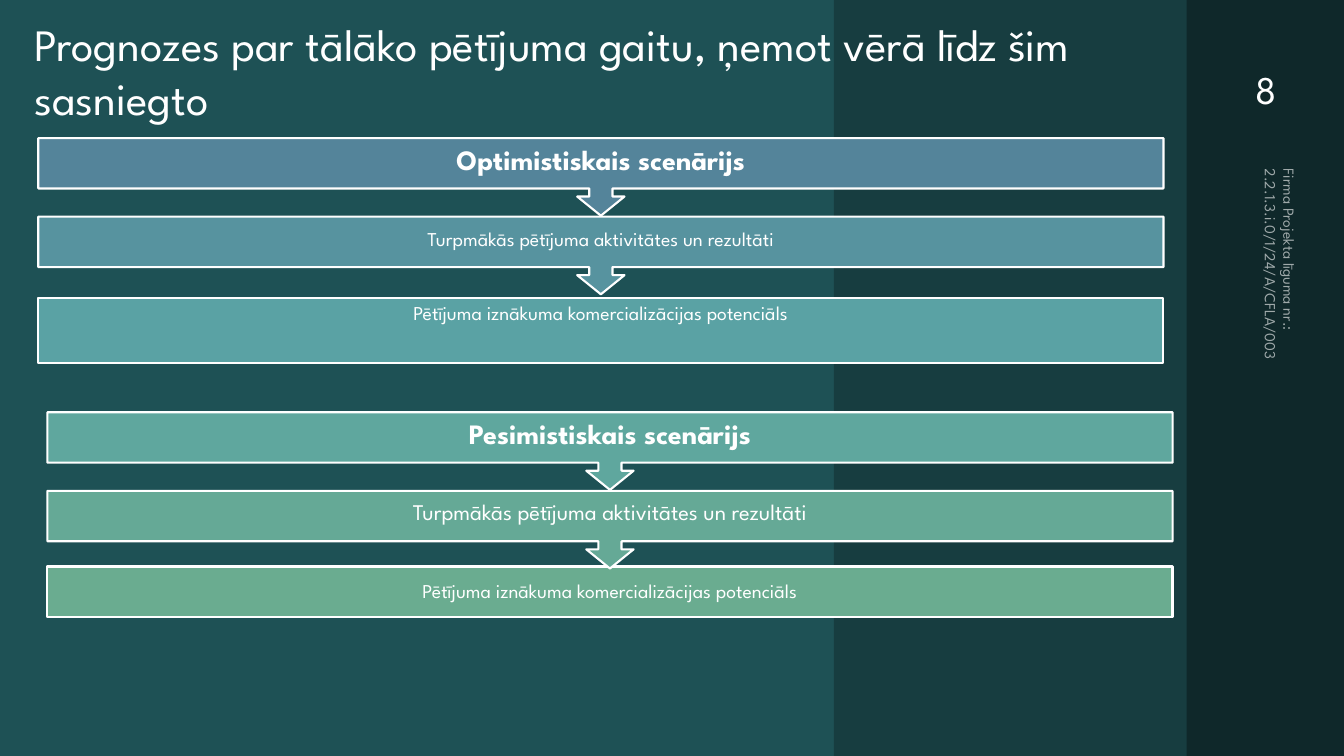
from pptx import Presentation
from pptx.util import Inches, Pt
from pptx.dml.color import RGBColor as RGB
from pptx.enum.shapes import MSO_SHAPE as Kind
from pptx.enum.text import MSO_ANCHOR as Anchor, PP_ALIGN as Align
from lxml import etree

FONT = "League Spartan"
HUES = {"back": "000000", "main": "1E5155", "mid": "173D40", "side": "0F282A",
        "white": "FFFFFF"}
TITLE = "Prognozes par tālāko pētījuma gaitu, ņemot vērā līdz šim sasniegto"
NUMBER = "8"
FOOTER = "Firma Projekta līguma nr.: 2.2.1.3.i.0/1/24/A/CFLA/003"
STEPS = "Turpmākās pētījuma aktivitātes un rezultāti"
MARKET = "Pētījuma iznākuma komercializācijas potenciāls"

PANELS = [(0, 13.33, "main"), (8.27, 3.52, "mid"), (11.77, 1.57, "side")]
# left, top, text, size, bold, fill, side inset, bottom inset
ARROWS = [
    (0.47, 4.87, STEPS, 16, False, "65A996", 0.12, 0.44),
    (0.47, 4.09, "Pesimistiskais scenārijs", 20, True, "5FA79E", 0.16, 0.47),
    (0.38, 2.15, STEPS, 14, False, "57939F", 0.11, 0.42),
    (0.38, 1.37, "Optimistiskais scenārijs", 20, True, "54849A", 0.16, 0.47),
]
# left, top, height, fill, inset, bottom inset
ENDS = [(0.47, 5.62, 0.5, "6AAC90", 0.11, 0.11),
        (0.38, 2.96, 0.64, "5AA2A4", 0.12, 0.44)]
WIDE = 11.16


def write(shape, text, size, bold=False, align=Align.LEFT, anchor=Anchor.TOP,
          pads=(0.1, 0.05, 0.1, 0.05), pitch=None):
    """Fill the shape with one paragraph; pads run left, top, right, bottom."""
    frame = shape.text_frame
    frame.word_wrap = True
    frame.vertical_anchor = anchor
    (frame.margin_left, frame.margin_top,
     frame.margin_right, frame.margin_bottom) = map(Inches, pads)
    para = frame.paragraphs[0]
    para.alignment = align
    if pitch:
        para.line_spacing = pitch
    run = para.add_run()
    run.text = text
    font = run.font
    font.name, font.size, font.bold = FONT, Pt(size), bold
    font.color.rgb = RGB.from_string(HUES["white"])
    return run


def paint(shape, fill, edge=False):
    shape.shadow.inherit = False
    shape.fill.solid()
    shape.fill.fore_color.rgb = RGB.from_string(fill)
    if edge:
        shape.line.color.rgb = RGB.from_string(HUES["white"])
        shape.line.width = Pt(1.5)
    else:
        shape.line.fill.background()


def label(shape, text, size, pad, low, bold=False):
    write(shape, text, size, bold=bold, align=Align.CENTER,
          anchor=Anchor.MIDDLE, pads=(pad, pad, pad, low), pitch=0.9)


def arrow_bar(shapes, left, top):
    """Draw a bar with a short arrow hanging from its middle."""
    mid, right = left + WIDE / 2, left + WIDE
    base, neck, tip = top + 0.5, top + 0.58, top + 0.77
    points = [(mid + 0.115, base), (mid + 0.115, neck), (mid + 0.235, neck),
              (mid, tip), (mid - 0.235, neck), (mid - 0.115, neck),
              (mid - 0.115, base), (left, base), (left, top), (right, top)]
    form = shapes.build_freeform(Inches(right), Inches(base))
    form.add_line_segments([(Inches(x), Inches(y)) for x, y in points])
    return form.convert_to_shape()


def main():
    deck = Presentation()
    deck.slide_width, deck.slide_height = Inches(13.33), Inches(7.5)
    slide = deck.slides.add_slide(deck.slide_layouts[6])
    slide.background.fill.solid()
    slide.background.fill.fore_color.rgb = RGB.from_string(HUES["back"])
    shapes = slide.shapes

    def rect(left, top, width, height):
        return shapes.add_shape(Kind.RECTANGLE,
                                *map(Inches, (left, top, width, height)))

    def box(left, top, width, height):
        return shapes.add_textbox(*map(Inches, (left, top, width, height)))

    for left, width, hue in PANELS:
        paint(rect(left, 0, width, 7.5), HUES[hue])

    write(box(12.1, 0.32, 0.92, 0.84), NUMBER, 28,
          align=Align.CENTER, anchor=Anchor.BOTTOM)
    foot = box(11.34, 2.7, 2.86, 0.61)
    foot.rotation = 90
    run = write(foot, FOOTER, 11, anchor=Anchor.BOTTOM)
    tint = run.font.fill.fore_color
    tint.rgb = RGB.from_string(HUES["white"])
    ns = "{http://schemas.openxmlformats.org/drawingml/2006/main}"
    for node in run.font._element.iter(ns + "srgbClr"):
        etree.SubElement(node, ns + "alpha").set("val", "60000")
    write(box(0.24, 0.12, 10.55, 1.65), TITLE, 32)

    for left, top, height, fill, pad, low in ENDS:
        bar = rect(left, top, WIDE, height)
        paint(bar, fill, edge=True)
        label(bar, MARKET, 14, pad, low)
    for left, top, text, size, bold, fill, pad, low in ARROWS:
        bar = arrow_bar(shapes, left, top)
        paint(bar, fill, edge=True)
        label(bar, text, size, pad, low, bold=bold)

    deck.save("out.pptx")


if __name__ == "__main__":
    main()
